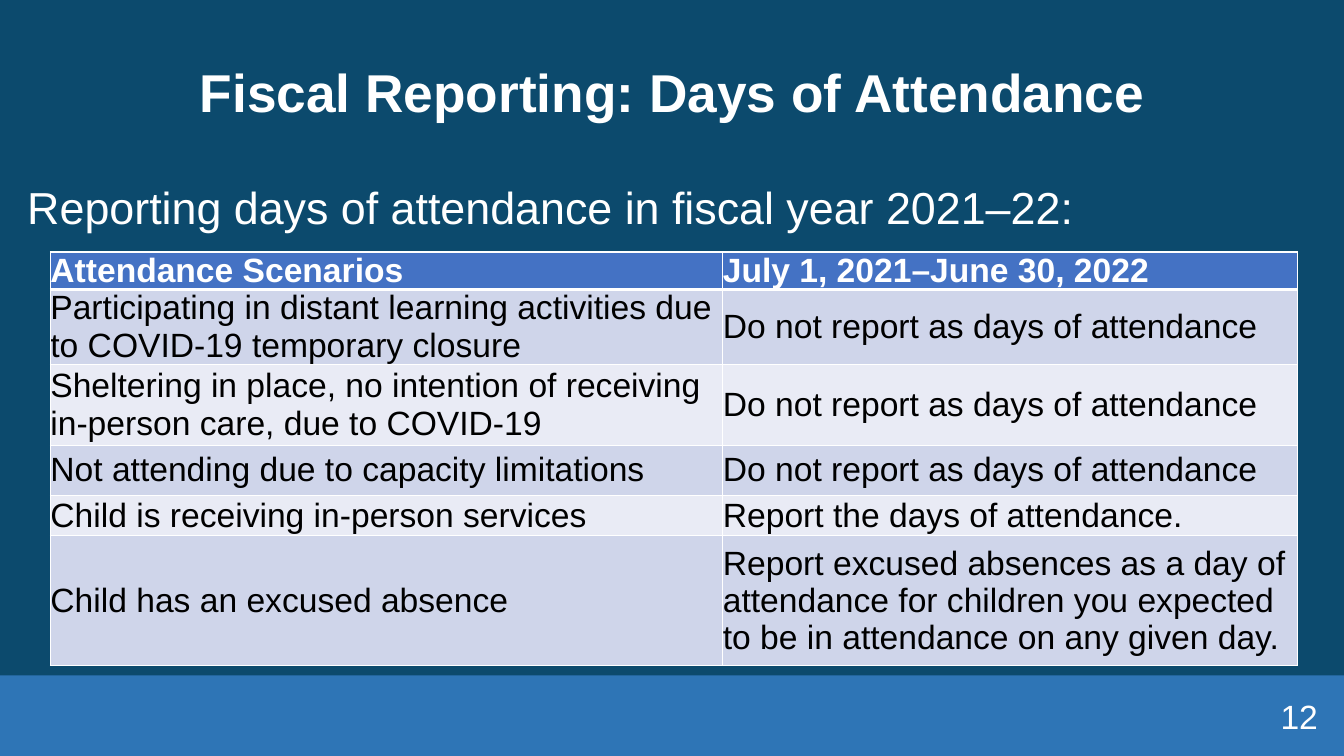
import pptx
import pptx.util
import pptx.dml.color
import pptx.enum.shapes
import pptx.enum.text
import pptx.oxml
import pptx.oxml.ns

Inches = pptx.util.Inches
Pt = pptx.util.Pt
ALIGN = pptx.enum.text.PP_ALIGN
MID = pptx.enum.text.MSO_ANCHOR.MIDDLE
TOP = pptx.enum.text.MSO_ANCHOR.TOP
NONE = pptx.enum.text.MSO_AUTO_SIZE.NONE

WHITE = "FFFFFF"
BLACK = "000000"
NAVY = "0C4A6D"
BLUE = "2E75B6"
HEAD = "4472C4"
BANDS = ["CFD5EA", "E9EBF5"]

COLS = [6.67, 5.7]
ROWS = [0.35, 0.7, 0.8, 0.5, 0.4, 1.29]
CELLS = [
    ("Attendance Scenarios", "July 1, 2021–June 30, 2022"),
    ("Participating in distant learning activities due to COVID-19 temporary closure",
     "Do not report as days of attendance"),
    ("Sheltering in place, no intention of receiving in-person care, due to COVID-19",
     "Do not report as days of attendance"),
    ("Not attending due to capacity limitations",
     "Do not report as days of attendance"),
    ("Child is receiving in-person services", "Report the days of attendance."),
    ("Child has an excused absence",
     "Report excused absences as a day of attendance for children you expected "
     "to be in attendance on any given day."),
]


def apply(item, form):
    for name, value in form.items():
        setattr(item, name, value)


def paint(fill, color):
    fill.solid()
    fill.fore_color.rgb = pptx.dml.color.RGBColor.from_string(color)


def place(shape, left, top, width, height):
    apply(shape, {"left": Inches(left), "top": Inches(top),
                  "width": Inches(width), "height": Inches(height)})


def write(frame, text, size, color=WHITE, bold=False, para=None):
    line = frame.paragraphs[0]
    apply(line, para or {})
    run = line.add_run()
    run.text = text
    apply(run.font, {"name": "Arial", "size": Pt(size), "bold": bold})
    paint(run.font.fill, color)


def label(shape, box, text, size, anchor, bold=False, para=None):
    place(shape, *box)
    apply(shape.text_frame, {"word_wrap": True, "auto_size": NONE,
                             "vertical_anchor": anchor})
    write(shape.text_frame, text, size, bold=bold, para=para)


def plain(line):
    props = line._p.get_or_add_pPr()
    props.set("marL", "0")
    props.set("indent", "0")
    props.append(pptx.oxml.parse_xml(
        f'<a:buNone {pptx.oxml.ns.nsdecls("a")}/>'))


def border(cell, widths):
    props = cell._tc.get_or_add_tcPr()
    for spot, (side, width) in enumerate(widths.items()):
        props.insert(spot, pptx.oxml.parse_xml(
            f'<a:ln{side} {pptx.oxml.ns.nsdecls("a")} w="{Pt(width)}">'
            f'<a:solidFill><a:srgbClr val="{WHITE}"/></a:solidFill></a:ln{side}>'))


def grid(slide):
    frame = slide.shapes.add_table(
        len(ROWS), len(COLS), Inches(0.5), Inches(2.5),
        Inches(sum(COLS)), Inches(sum(ROWS)))
    table = frame.table
    for col, width in zip(table.columns, COLS):
        col.width = Inches(width)
    for r, (row, height, texts) in enumerate(zip(table.rows, ROWS, CELLS)):
        row.height = Inches(height)
        head = r == 0
        for cell, text in zip(row.cells, texts):
            apply(cell, {"margin_left": 0, "margin_right": 0, "margin_top": 0,
                         "margin_bottom": 0, "vertical_anchor": MID})
            paint(cell.fill, HEAD if head else BANDS[(r - 1) % 2])
            border(cell, {"L": 1, "R": 1, "T": 3 if r == 1 else 1,
                          "B": 3 if head else 1})
            write(cell.text_frame, text, 24, WHITE if head else BLACK, head)


def band(slide):
    bar = slide.shapes.add_shape(
        pptx.enum.shapes.MSO_SHAPE.RECTANGLE,
        Inches(0), Inches(6.7), Inches(13.33), Inches(0.8))
    bar.shadow.inherit = False
    paint(bar.fill, BLUE)
    bar.line.fill.background()


def main():
    deck = pptx.Presentation()
    apply(deck, {"slide_width": Inches(13.33), "slide_height": Inches(7.5)})
    slide = deck.slides.add_slide(deck.slide_layouts[1])
    paint(slide.background.fill, NAVY)
    band(slide)
    label(slide.shapes.title, (0.17, 0.22, 13, 1.45),
          "Fiscal Reporting: Days of Attendance", 38, MID, True,
          {"alignment": ALIGN.CENTER, "line_spacing": 0.9})
    body = slide.placeholders[1]
    label(body, (0.17, 1.79, 13, 5.11),
          "Reporting days of attendance in fiscal year 2021–22:", 32, TOP,
          para={"line_spacing": 0.9, "space_before": Pt(10)})
    plain(body.text_frame.paragraphs[0])
    grid(slide)
    page = slide.shapes.add_textbox(0, 0, 0, 0)
    label(page, (10.17, 6.9, 3, 0.4), "12", 24, MID,
          para={"alignment": ALIGN.RIGHT})
    deck.save("out.pptx")


if __name__ == "__main__":
    main()
